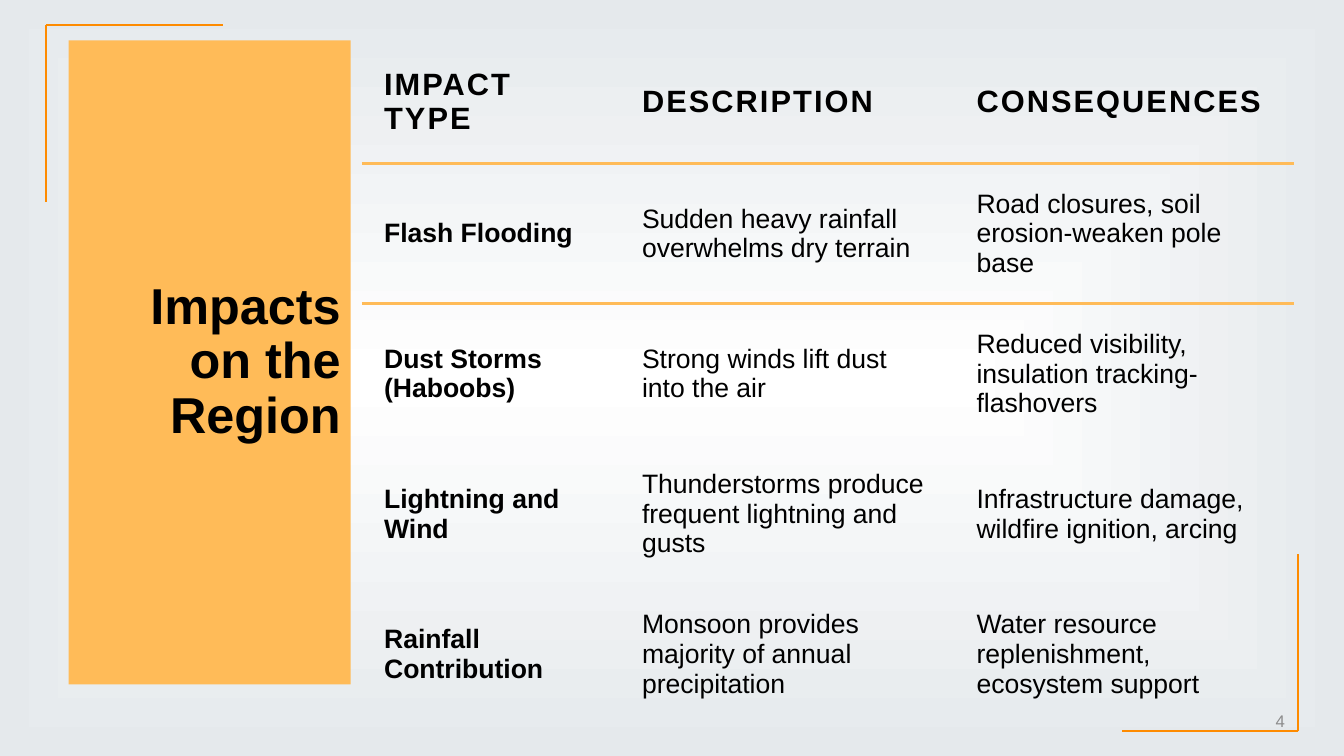
from dataclasses import dataclass

from lxml import etree
from pptx import Presentation
from pptx import util as u
from pptx.dml.color import RGBColor
from pptx.enum import shapes, text
from pptx.oxml import ns

COLORS = {
    "white": "FFFFFF",
    "mist": "E5E9EC",
    "amber": "FFBB58",
    "orange": "FE8B00",
    "black": "000000",
    "gray": "8C8C8C",
}
NO_STYLE_TABLE = "{2D5ABB26-0587-4C30-8999-92F81FD0307C}"
COLUMN_WIDTHS = (6.5, 8.43, 8.56)
ROW_HEIGHTS = (3.1, 2.72, 3.48, 3.48, 3.48)
CELL_INSET = 0.56
IMPACTS = (
    ("IMPACT TYPE", "DESCRIPTION", "CONSEQUENCES"),
    ("Flash Flooding", "Sudden heavy rainfall overwhelms dry terrain",
     "Road closures, soil erosion-weaken pole base"),
    ("Dust Storms (Haboobs)", "Strong winds lift dust into the air",
     "Reduced visibility, insulation tracking-flashovers"),
    ("Lightning and Wind", "Thunderstorms produce frequent lightning and gusts",
     "Infrastructure damage, wildfire ignition, arcing"),
    ("Rainfall Contribution", "Monsoon provides majority of annual precipitation",
     "Water resource replenishment, ecosystem support"),
)


@dataclass(frozen=True)
class Bracket:
    """Corner point in cm, with signed arm length towards the slide centre."""
    x: float
    y: float
    arm: float


@dataclass(frozen=True)
class TextStyle:
    size: float
    color: str = "black"
    bold: bool = False
    align: text.PP_ALIGN = text.PP_ALIGN.LEFT
    line_spacing: float = 1.0
    tracking: int = 0


BRACKETS = (Bracket(1.17, 0.64, 4.45), Bracket(32.72, 18.42, -4.45))
TITLE = TextStyle(36, bold=True, align=text.PP_ALIGN.RIGHT, line_spacing=0.9)
NUMBER = TextStyle(12, "gray", align=text.PP_ALIGN.RIGHT)
HEADER = TextStyle(22, bold=True, tracking=150)
LABEL = TextStyle(19, bold=True)
BODY = TextStyle(19)


def rgb(name: str) -> RGBColor:
    return RGBColor.from_string(COLORS[name])


def set_background(slide) -> None:
    """Fill the slide with a rectangular gradient, white at the centre."""
    fill = slide.background.fill
    fill.gradient()
    for stop, name in zip(fill.gradient_stops, ("white", "mist")):
        stop.color.rgb = rgb(name)
    lin = next(slide.element.iter(ns.qn("a:lin")))
    shade = etree.Element(ns.qn("a:path"), {"path": "rect"})
    etree.SubElement(shade, ns.qn("a:fillToRect"), dict.fromkeys("ltrb", "50000"))
    lin.getparent().replace(lin, shade)


def write(tf, content: str, style: TextStyle) -> None:
    tf.word_wrap = True
    p = tf.paragraphs[0]
    p.alignment = style.align
    p.line_spacing = style.line_spacing
    r = p.add_run()
    r.text = content
    font = {"name": "Arial", "size": u.Pt(style.size), "bold": style.bold}
    for key, value in font.items():
        setattr(r.font, key, value)
    r.font.color.rgb = rgb(style.color)
    if style.tracking:
        r.font._element.set("spc", str(style.tracking))


def draw_bracket(slide, bracket: Bracket) -> None:
    x, y, arm = bracket.x, bracket.y, bracket.arm
    for end_x, end_y in ((x, y + arm), (x + arm, y)):
        line = slide.shapes.add_connector(
            shapes.MSO_CONNECTOR.STRAIGHT,
            u.Cm(x), u.Cm(y), u.Cm(end_x), u.Cm(end_y))
        line.line.color.rgb = rgb("orange")
        line.line.width = u.Pt(1.5)
        etree.SubElement(line._element.spPr, ns.qn("a:effectLst"))


def draw_title(slide) -> None:
    sp = slide.shapes.add_shape(
        shapes.MSO_SHAPE.RECTANGLE, u.Cm(1.73), u.Cm(1.02), u.Cm(7.11), u.Cm(16.23))
    sp.shadow.inherit = False
    sp.fill.solid()
    sp.fill.fore_color.rgb = rgb("amber")
    sp.line.fill.background()
    sp.text_frame.vertical_anchor = text.MSO_ANCHOR.MIDDLE
    write(sp.text_frame, "Impacts on the Region", TITLE)


def draw_slide_number(slide) -> None:
    sp = slide.shapes.add_textbox(u.Cm(31.06), u.Cm(17.65), u.Cm(1.57), u.Cm(1.02))
    sp.text_frame.vertical_anchor = text.MSO_ANCHOR.MIDDLE
    write(sp.text_frame, "4", NUMBER)


def add_rule(cell, side: str) -> None:
    """Draw the header rule on one side (lnT or lnB) of a cell."""
    border = etree.Element(ns.qn(f"a:{side}"), {"w": str(u.Pt(2.25))})
    fill = etree.SubElement(border, ns.qn("a:solidFill"))
    etree.SubElement(fill, ns.qn("a:srgbClr"), {"val": COLORS["amber"]})
    cell._tc.get_or_add_tcPr().insert(0, border)


def draw_impacts(slide) -> None:
    frame = slide.shapes.add_table(
        len(IMPACTS), len(COLUMN_WIDTHS), u.Cm(9.12), u.Cm(1.02),
        u.Cm(sum(COLUMN_WIDTHS)), u.Cm(sum(ROW_HEIGHTS)))
    table = frame.table
    table.first_row = table.horz_banding = False
    next(table._tbl.iter(ns.qn("a:tableStyleId"))).text = NO_STYLE_TABLE
    for column, width in zip(table.columns, COLUMN_WIDTHS):
        column.width = u.Cm(width)
    for row, height in zip(table.rows, ROW_HEIGHTS):
        row.height = u.Cm(height)

    cell_format = {"vertical_anchor": text.MSO_ANCHOR.MIDDLE}
    for side in ("left", "top", "right", "bottom"):
        cell_format[f"margin_{side}"] = u.Cm(CELL_INSET)
    for i, entries in enumerate(IMPACTS):
        for j, content in enumerate(entries):
            cell = table.cell(i, j)
            for key, value in cell_format.items():
                setattr(cell, key, value)
            cell.fill.background()
            style = HEADER if i == 0 else LABEL if j == 0 else BODY
            write(cell.text_frame, content, style)
            if i < 2:
                add_rule(cell, ("lnB", "lnT")[i])


def main() -> None:
    prs = Presentation()
    prs.slide_width, prs.slide_height = u.Cm(33.87), u.Cm(19.05)
    slide = prs.slides.add_slide(prs.slide_layouts[6])
    set_background(slide)
    for bracket in BRACKETS:
        draw_bracket(slide, bracket)
    draw_title(slide)
    draw_slide_number(slide)
    draw_impacts(slide)
    prs.save("out.pptx")


if __name__ == "__main__":
    main()
